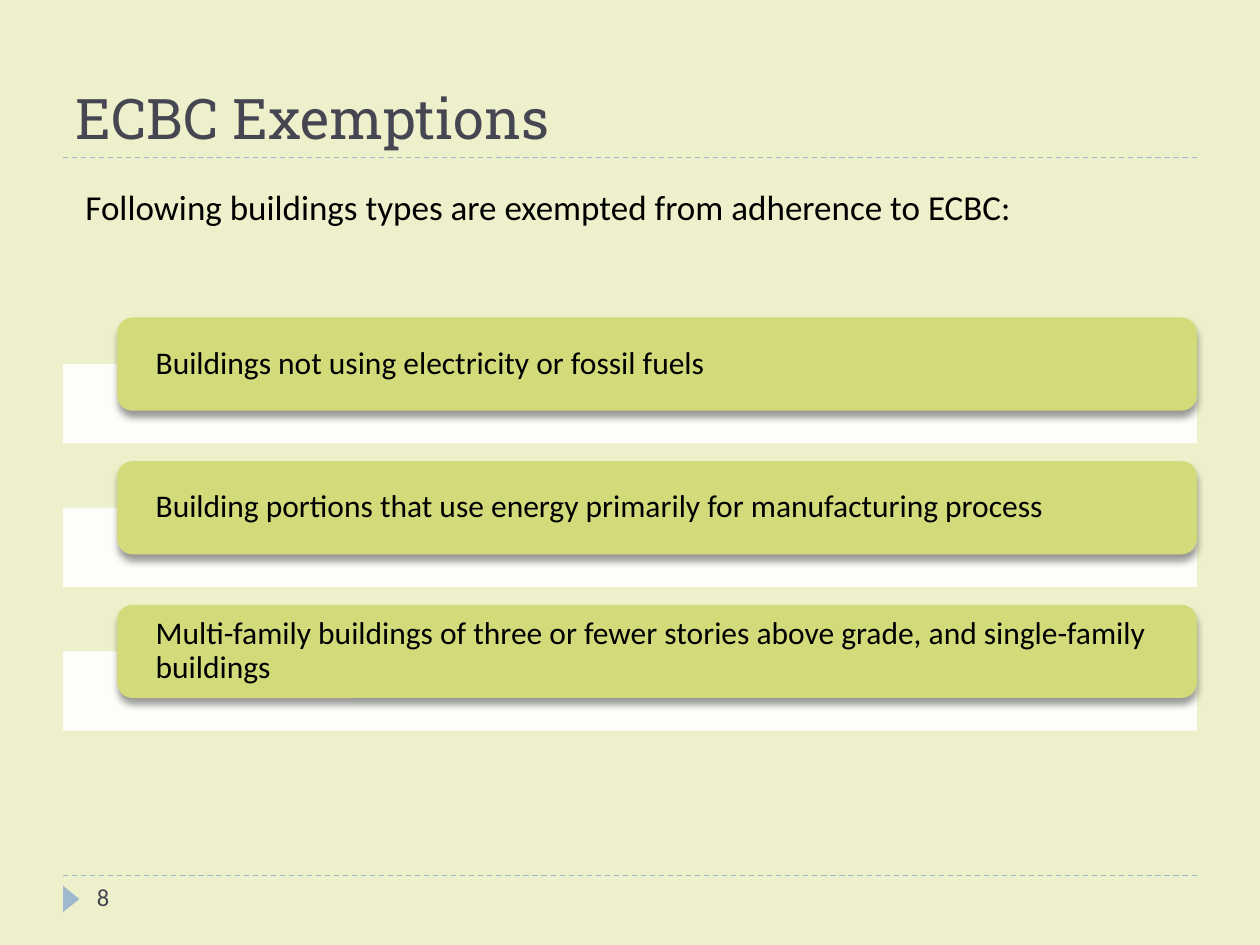
from lxml.etree import SubElement
from pptx import Presentation
from pptx.dml.color import RGBColor
from pptx.enum.dml import MSO_LINE
from pptx.enum.shapes import MSO_CONNECTOR, MSO_SHAPE
from pptx.enum.text import MSO_ANCHOR, PP_ALIGN
from pptx.oxml import parse_xml
from pptx.oxml.ns import nsdecls, qn
from pptx.util import Inches, Pt

BACKGROUND = RGBColor(0xED, 0xF0, 0xCA)
CARD_GREEN = RGBColor(0xD2, 0xDA, 0x7A)
ACCENT_BLUE = RGBColor(0x9F, 0xB8, 0xCD)
SLATE = RGBColor(0x46, 0x46, 0x53)
BLACK = RGBColor(0, 0, 0)
WHITE = RGBColor(0xFF, 0xFF, 0xFF)

EXEMPTIONS = [
    "Buildings not using electricity or fossil fuels",
    "Building portions that use energy primarily for manufacturing process",
    "Multi-family buildings of three or fewer stories above grade, and single-family buildings",
]


def write_text(shape, text, size, color, font="Calibri", anchor=MSO_ANCHOR.TOP):
    frame = shape.text_frame
    frame.word_wrap = True
    frame.vertical_anchor = anchor
    para = frame.paragraphs[0]
    para.text = text
    para.alignment = PP_ALIGN.LEFT
    para.font.size = Pt(size)
    para.font.name = font
    para.font.color.rgb = color
    return para


def add_filled_shape(page, kind, left, top, width, height, color):
    shape = page.shapes.add_shape(
        kind, Inches(left), Inches(top), Inches(width), Inches(height))
    shape.shadow.inherit = False
    shape.fill.solid()
    shape.fill.fore_color.rgb = color
    shape.line.fill.background()
    return shape


def add_text_box(page, left, top, width, height, text, size, color):
    box = page.shapes.add_textbox(
        Inches(left), Inches(top), Inches(width), Inches(height))
    write_text(box, text, size, color)


def add_dashed_rule(page, left, top, width):
    rule = page.shapes.add_connector(
        MSO_CONNECTOR.STRAIGHT, Inches(left), Inches(top),
        Inches(left + width), Inches(top))
    rule.line.color.rgb = ACCENT_BLUE
    rule.line.width = Pt(0.75)
    rule.line.dash_style = MSO_LINE.DASH
    SubElement(rule._element.spPr, qn("a:effectLst"))


def add_heading(page, left, top, width, height):
    title = page.shapes.title
    title.left, title.top = Inches(left), Inches(top)
    title.width, title.height = Inches(width), Inches(height)
    write_text(title, "ECBC Exemptions", 32, SLATE, "Roboto Slab", MSO_ANCHOR.BOTTOM)
    add_dashed_rule(page, left, top + height, width)


def add_drop_shadow(shape):
    properties = shape._element.spPr
    properties.remove(properties.find(qn("a:effectLst")))
    properties.append(parse_xml(
        f'<a:effectLst {nsdecls("a")}>'
        f'<a:outerShdw blurRad="{Pt(4)}" dist="{Pt(3.4)}" dir="5400000" rotWithShape="0">'
        '<a:srgbClr val="000000"><a:alpha val="40000"/></a:srgbClr>'
        '</a:outerShdw></a:effectLst>'))


def add_exemption(page, left, top, width, text):
    """Place a white band with a rounded card overlapping its upper part."""
    indent, card_height, band_offset, band_height = 0.43, 0.74, 0.37, 0.63
    band = add_filled_shape(page, MSO_SHAPE.RECTANGLE, left, top + band_offset,
                            width, band_height, WHITE)
    color = band.fill._xPr.find(qn("a:solidFill"))[0]
    SubElement(color, qn("a:alpha"), val="90000")

    card = add_filled_shape(page, MSO_SHAPE.ROUNDED_RECTANGLE, left + indent, top,
                            width - indent, card_height, CARD_GREEN)
    add_drop_shadow(card)
    para = write_text(card, text, 18, BLACK, anchor=MSO_ANCHOR.MIDDLE)
    para.line_spacing = 0.9
    frame = card.text_frame
    frame.margin_left = frame.margin_right = Inches(0.27)
    frame.margin_top = frame.margin_bottom = 0


def add_exemption_list(page, left, top, width, pitch):
    for row, text in enumerate(EXEMPTIONS):
        add_exemption(page, left, top + row * pitch, width, text)


def add_footer(page, left, top, width):
    add_dashed_rule(page, left, top, width)
    marker = add_filled_shape(page, MSO_SHAPE.ISOSCELES_TRIANGLE,
                              left - 0.04, top + 0.12, 0.21, 0.13, ACCENT_BLUE)
    marker.rotation = 90
    add_text_box(page, left + 0.17, top, 2.17, 0.4, "8", 14, SLATE)


def main():
    deck = Presentation()
    deck.slide_width, deck.slide_height = Inches(10), Inches(7.5)
    page = deck.slides.add_slide(deck.slide_layouts.get_by_name("Title Only"))
    page.background.fill.solid()
    page.background.fill.fore_color.rgb = BACKGROUND

    add_heading(page, 0.5, 0.17, 9, 1.08)
    add_exemption_list(page, 0.5, 2.52, 9, 1.14)
    add_text_box(page, 0.58, 1.42, 7.66, 0.77,
                 "Following buildings types are exempted from adherence to ECBC:", 20, BLACK)
    add_footer(page, 0.5, 6.95, 9)
    deck.save("out.pptx")


if __name__ == "__main__":
    main()
